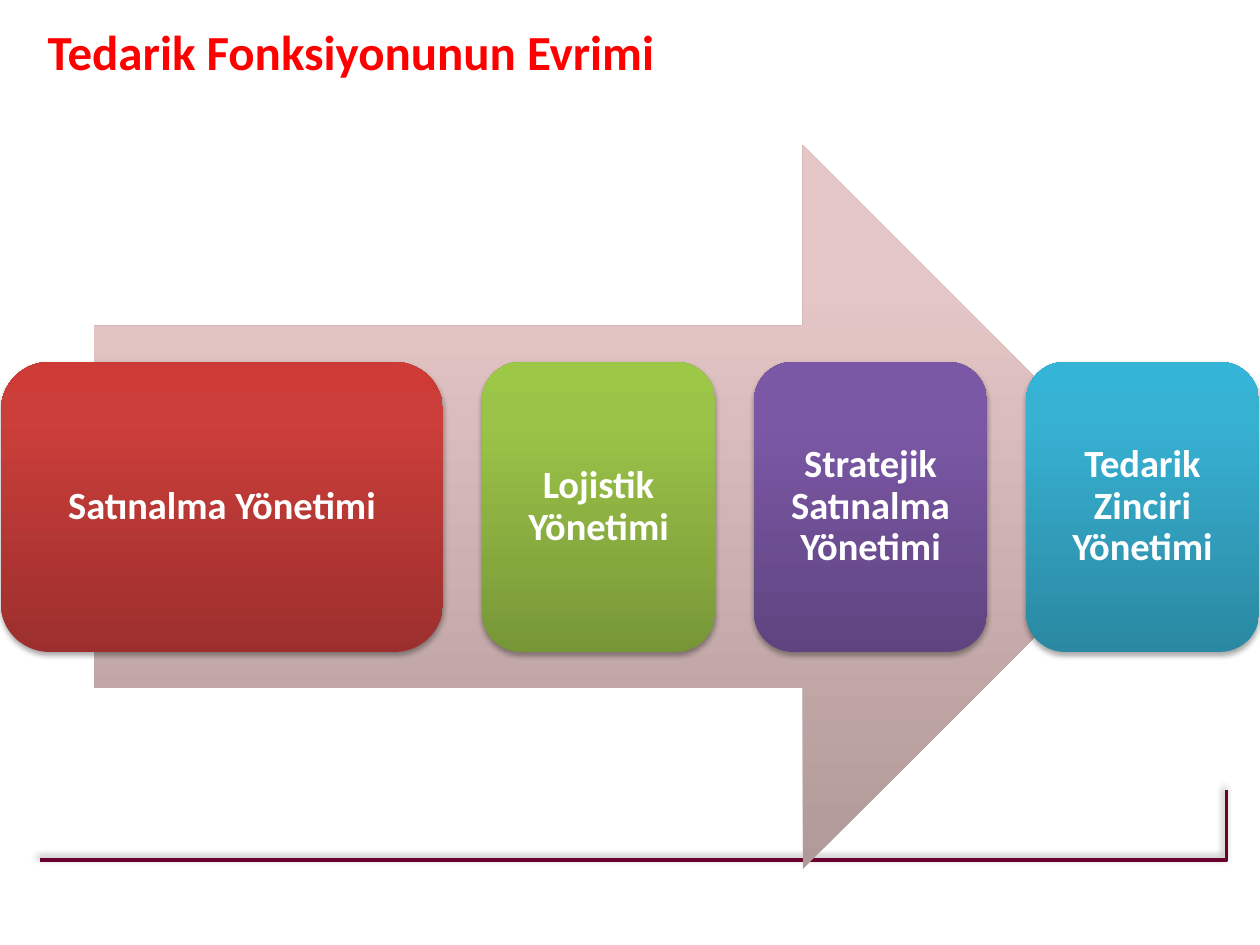
"""Build the slide on the evolution of the procurement function."""
import pptx
import pptx.util
import pptx.oxml.ns
import pptx.dml.color
import pptx.enum.shapes
import pptx.enum.text
from lxml import etree

SCALE = 914400 / 126
PAGE_WIDTH, PAGE_HEIGHT = 1260, 945
TITLE = "Tedarik Fonksiyonunun Evrimi"
COLOURS = {"title": "FF0000", "text": "FFFFFF", "rule": "6A002D", "shadow": "000000"}
STAGES = [
    ("Satınalma Yönetimi", 442, ("9C2F2D", "CB3E3A", "CE3B37")),
    ("Lojistik Yönetimi", 233, ("779737", "9BC348", "9DC746")),
    ("Stratejik Satınalma Yönetimi", 233, ("5F4480", "7B58A6", "7C57A8")),
    ("Tedarik Zinciri Yönetimi", 233, ("2A88A2", "37B1D2", "34B4D6")),
]
ARROW_COLOURS = ("B09998", "E5C6C6", "E6C7C6")
STOPS = (0, 80, 100)
RULE_POINTS = [(40, 860), (1227, 860), (1227, 790)]
RULE_SHADOW = {"alpha": 40, "blur": 4, "distance": 3, "angle": 225}
STAGE_SHADOW = {"alpha": 35, "blur": 3.1, "distance": 1.8, "angle": 90}
STAGE_MARGIN, STAGE_TOP, STAGE_HEIGHT = 1, 362, 290
SHAPES = pptx.enum.shapes.MSO_SHAPE
ALIGN = pptx.enum.text.PP_ALIGN
ANCHOR = pptx.enum.text.MSO_ANCHOR


def emu(pixels):
    return pptx.util.Emu(round(pixels * SCALE))


def rgb(name):
    return pptx.dml.color.RGBColor.from_string(COLOURS[name])


def add_element(parent, tag, **attributes):
    element = etree.SubElement(parent, pptx.oxml.ns.qn(tag))
    for name, value in attributes.items():
        element.set(name, str(value))
    return element


def add_shadow(shape, alpha, blur, distance, angle):
    effects = shape._element.spPr.find(pptx.oxml.ns.qn("a:effectLst"))
    shadow = add_element(effects, "a:outerShdw", blurRad=round(blur * 12700),
                         dist=round(distance * 12700), dir=angle * 60000,
                         algn="ctr", rotWithShape=0)
    colour = add_element(shadow, "a:srgbClr", val=COLOURS["shadow"])
    add_element(colour, "a:alpha", val=alpha * 1000)


def add_gradient_shape(page, kind, place, colours):
    shape = page.shapes.add_shape(kind, *map(emu, place))
    shape.shadow.inherit = False
    shape.line.fill.background()
    shape.fill.gradient()
    shape.fill.gradient_angle = 90
    stops = shape._element.spPr.find(".//" + pptx.oxml.ns.qn("a:gsLst"))
    for stop in list(stops):
        stops.remove(stop)
    for position, colour in zip(STOPS, colours):
        stop = add_element(stops, "a:gs", pos=position * 1000)
        add_element(stop, "a:srgbClr", val=colour)
    return shape


def write_text(shape, text, size, colour, align, frame_format):
    frame = shape.text_frame
    for name, value in frame_format.items():
        setattr(frame, name, value)
    paragraph = frame.paragraphs[0]
    paragraph.alignment = align
    span = paragraph.add_run()
    span.text = text
    font_format = {"name": "Calibri", "size": pptx.util.Pt(size), "bold": True}
    for name, value in font_format.items():
        setattr(span.font, name, value)
    span.font.color.rgb = rgb(colour)
    return paragraph


def add_rule(page):
    start, *rest = RULE_POINTS
    builder = page.shapes.build_freeform(*start, scale=SCALE)
    builder.add_line_segments(rest, close=False)
    rule = builder.convert_to_shape()
    rule.shadow.inherit = False
    rule.fill.background()
    rule.line.color.rgb = rgb("rule")
    rule.line.width = pptx.util.Pt(1.75)
    add_shadow(rule, **RULE_SHADOW)


def add_stages(page):
    free = PAGE_WIDTH - 2 * STAGE_MARGIN - sum(width for _, width, _ in STAGES)
    gap = free / (len(STAGES) - 1)
    margins = dict.fromkeys(
        ("margin_left", "margin_top", "margin_right", "margin_bottom"), emu(11))
    frame_format = {"word_wrap": True, "vertical_anchor": ANCHOR.MIDDLE, **margins}
    left = STAGE_MARGIN
    for label, width, colours in STAGES:
        box = add_gradient_shape(page, SHAPES.ROUNDED_RECTANGLE,
                                 (left, STAGE_TOP, width, STAGE_HEIGHT), colours)
        add_shadow(box, **STAGE_SHADOW)
        paragraph = write_text(box, label, 22, "text", ALIGN.CENTER, frame_format)
        paragraph.line_spacing = 0.9
        left += width + gap


def main():
    deck = pptx.Presentation()
    deck.slide_width, deck.slide_height = emu(PAGE_WIDTH), emu(PAGE_HEIGHT)
    page = deck.slides.add_slide(deck.slide_layouts[5])
    title = page.shapes.title
    title.left, title.top, title.width, title.height = map(emu, (35, 15, 1091, 72))
    write_text(title, TITLE, 28, "title", ALIGN.LEFT,
               {"word_wrap": True, "vertical_anchor": ANCHOR.TOP})
    add_rule(page)
    add_gradient_shape(page, SHAPES.RIGHT_ARROW, (94, 145, 1071, 724), ARROW_COLOURS)
    add_stages(page)
    deck.save("out.pptx")


if __name__ == "__main__":
    main()
